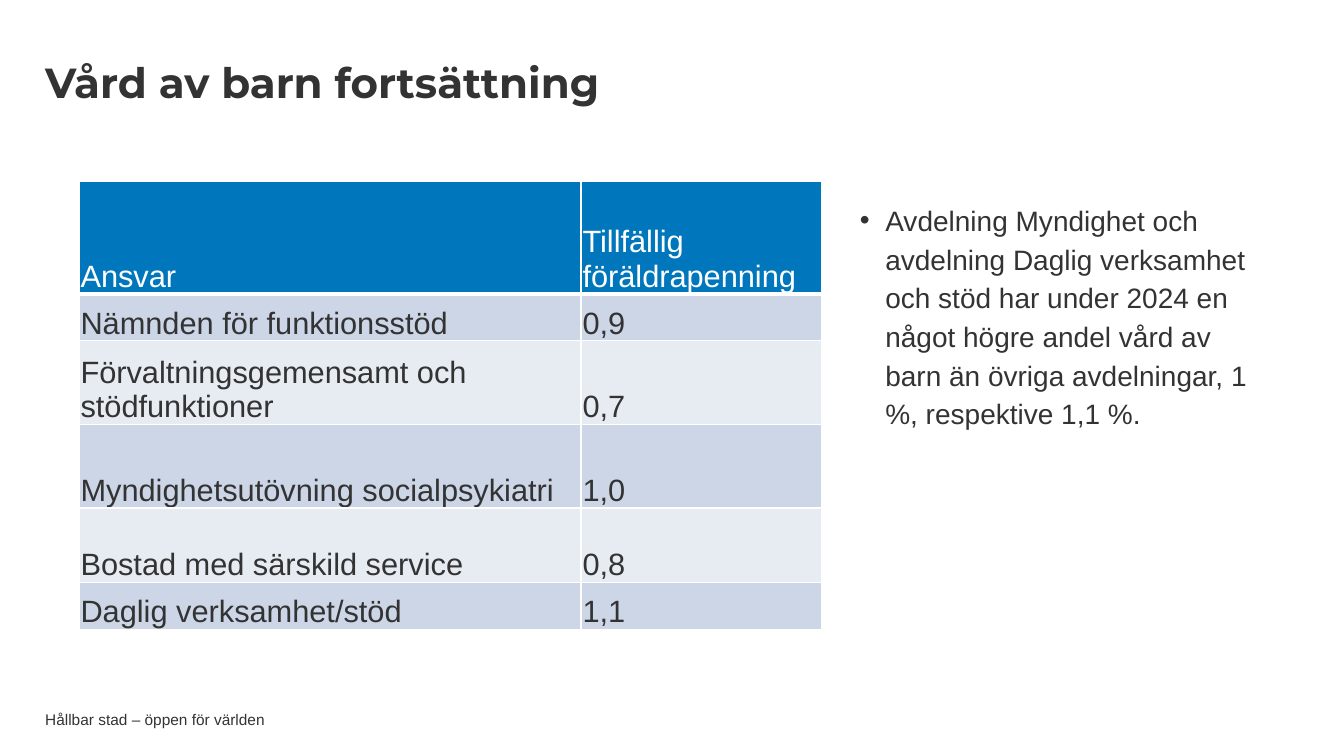
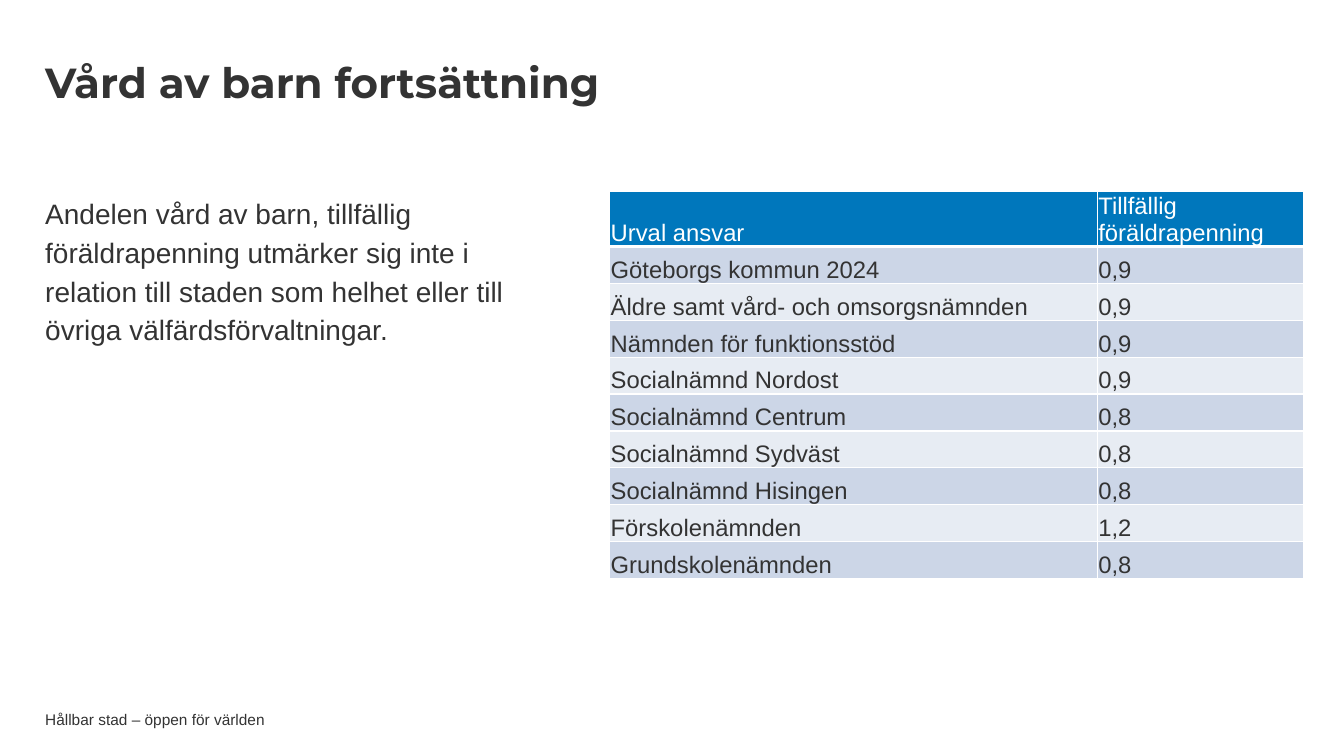
import pptx
import pptx.dml.color
import pptx.enum.text
import pptx.oxml
import pptx.oxml.ns
import pptx.util
from pptx.util import Cm

COLOURS = {"text": "333333", "header": "0077BC", "band_dark": "CCD6E7",
           "band_light": "E7ECF3", "white": "FFFFFF"}
TITLE = "Vård av barn fortsättning"
FOOTER = "Hållbar stad – öppen för världen"
ANCHOR = pptx.enum.text.MSO_ANCHOR
NO_AUTOFIT = pptx.enum.text.MSO_AUTO_SIZE.NONE
LEFT = pptx.enum.text.PP_ALIGN.LEFT

# Shared text styles: frame, paragraph and font values
STYLES = {
    "title": {
        "frame": {"vertical_anchor": ANCHOR.MIDDLE, "margin_top": Cm(0.13), "margin_bottom": Cm(0.13)},
        "paragraph": {"line_spacing": 0.9},
        "font": {"name": "Montserrat", "size": pptx.util.Pt(30), "bold": True}},
    "body": {
        "frame": {"vertical_anchor": ANCHOR.TOP, "margin_top": 0, "margin_bottom": 0},
        "paragraph": {"line_spacing": 1.15, "space_after": pptx.util.Pt(3)},
        "font": {"name": "Arial", "size": pptx.util.Pt(20)}},
    "footer": {
        "frame": {"vertical_anchor": ANCHOR.MIDDLE, "margin_top": 0, "margin_bottom": 0},
        "paragraph": {},
        "font": {"name": "Arial", "size": pptx.util.Pt(11)}},
}


def set_values(target, values):
    for name, value in values.items():
        setattr(target, name, value)


def colour(name):
    return pptx.dml.color.RGBColor.from_string(COLOURS[name])


def place(shape, box):
    set_values(shape, dict(zip(("left", "top", "width", "height"), map(Cm, box))))


def write_text(shape, text, style_name, box, bullet=None):
    """Place a one-paragraph text; bullet=False removes the inherited one."""
    style = STYLES[style_name]
    place(shape, box)
    frame = shape.text_frame
    set_values(frame, {"word_wrap": True, "auto_size": NO_AUTOFIT,
                       "margin_left": 0, "margin_right": 0, **style["frame"]})
    frame.text = text
    paragraph = frame.paragraphs[0]
    if bullet is not None:
        properties = paragraph._p.get_or_add_pPr()
        indent = Cm(0.64) if bullet else 0
        properties.set("marL", str(indent))
        properties.set("indent", str(-indent))
        tag = '<a:buChar %s char="•"/>' if bullet else "<a:buNone %s/>"
        properties.append(pptx.oxml.parse_xml(tag % pptx.oxml.ns.nsdecls("a")))
    set_values(paragraph, {"alignment": LEFT, "space_before": 0, **style["paragraph"]})
    font = paragraph.runs[0].font
    set_values(font, style["font"])
    font.color.rgb = colour("text")


def set_borders(cell, is_header):
    """White cell borders, heavier below the header row."""
    properties = cell._tc.get_or_add_tcPr()
    for position, side in enumerate("LRTB"):
        points = 3 if is_header and side == "B" else 1
        properties.insert(position, pptx.oxml.parse_xml(
            f'<a:ln{side} {pptx.oxml.ns.nsdecls("a")} w="{pptx.util.Pt(points)}"><a:solidFill>'
            f'<a:srgbClr val="{COLOURS["white"]}"/></a:solidFill></a:ln{side}>'))


def add_value_table(slide, left, top, column_widths, row_heights, rows, size, margin):
    box = (left, top, sum(column_widths), sum(row_heights))
    table = slide.shapes.add_table(len(rows), len(column_widths), *map(Cm, box)).table
    table.horz_banding = False
    for column, width in zip(table.columns, column_widths):
        column.width = Cm(width)
    for row_number, (row, height, texts) in enumerate(zip(table.rows, row_heights, rows)):
        row.height = Cm(height)
        is_header = row_number == 0
        fill = "header" if is_header else "band_dark" if row_number % 2 else "band_light"
        for cell, text in zip(row.cells, texts):
            cell.text = text
            set_values(cell, {"vertical_anchor": ANCHOR.BOTTOM, "margin_left": Cm(margin),
                              "margin_right": Cm(margin), "margin_top": Cm(margin),
                              "margin_bottom": 0})
            cell.fill.solid()
            cell.fill.fore_color.rgb = colour(fill)
            set_borders(cell, is_header)
            font = cell.text_frame.paragraphs[0].runs[0].font
            set_values(font, {"name": "Arial", "size": pptx.util.Pt(size), "bold": False})
            font.color.rgb = colour("white" if is_header else "text")


def add_content_slide(presentation, body_text, body_box, bullet, table):
    """Title, body text, value table and footer."""
    slide = presentation.slides.add_slide(presentation.slide_layouts[1])
    footer = slide.shapes.add_textbox(0, 0, 0, 0)
    write_text(footer, FOOTER, "footer", (1.14, 17.93, 24, 0.41))
    write_text(slide.shapes.title, TITLE, "title", (1.14, 1.12, 25.48, 2.06))
    write_text(slide.placeholders[1], body_text, "body", body_box, bullet)
    add_value_table(slide, **table)


def main():
    presentation = pptx.Presentation()
    set_values(presentation, {"slide_width": Cm(33.87), "slide_height": Cm(19.05)})

    # Departments within the committee
    add_content_slide(
        presentation,
        "Avdelning Myndighet och avdelning Daglig verksamhet och stöd har under 2024 en "
        "något högre andel vård av barn än övriga avdelningar, 1 %, respektive 1,1 %.",
        (21.67, 5, 10.46, 9.58), True,
        {"left": 1.99, "top": 4.58, "column_widths": (12.65, 6.07),
         "row_heights": (2.82, 1.19, 2.1, 2.11, 1.87, 1.19), "size": 22, "margin": 0.04,
         "rows": (("Ansvar", "Tillfällig föräldrapenning"),
                  ("Nämnden för funktionsstöd", "0,9"),
                  ("Förvaltningsgemensamt och stödfunktioner", "0,7"),
                  ("Myndighetsutövning socialpsykiatri", "1,0"),
                  ("Bostad med särskild service", "0,8"),
                  ("Daglig verksamhet/stöd", "1,1"))})

    # Comparison across the city
    add_content_slide(
        presentation,
        "Andelen vård av barn, tillfällig föräldrapenning utmärker sig inte i relation till "
        "staden som helhet eller till övriga välfärdsförvaltningar.",
        (1.14, 4.83, 12.4, 4.32), False,
        {"left": 15.37, "top": 4.83, "column_widths": (12.29, 5.18),
         "row_heights": (1.38,) + (0.93,) * 9, "size": 17, "margin": 0.02,
         "rows": (("Urval ansvar", "Tillfällig föräldrapenning"),
                  ("Göteborgs kommun 2024", "0,9"),
                  ("Äldre samt vård- och omsorgsnämnden", "0,9"),
                  ("Nämnden för funktionsstöd", "0,9"),
                  ("Socialnämnd Nordost", "0,9"),
                  ("Socialnämnd Centrum", "0,8"),
                  ("Socialnämnd Sydväst", "0,8"),
                  ("Socialnämnd Hisingen", "0,8"),
                  ("Förskolenämnden", "1,2"),
                  ("Grundskolenämnden", "0,8"))})

    presentation.save("out.pptx")


if __name__ == "__main__":
    main()
